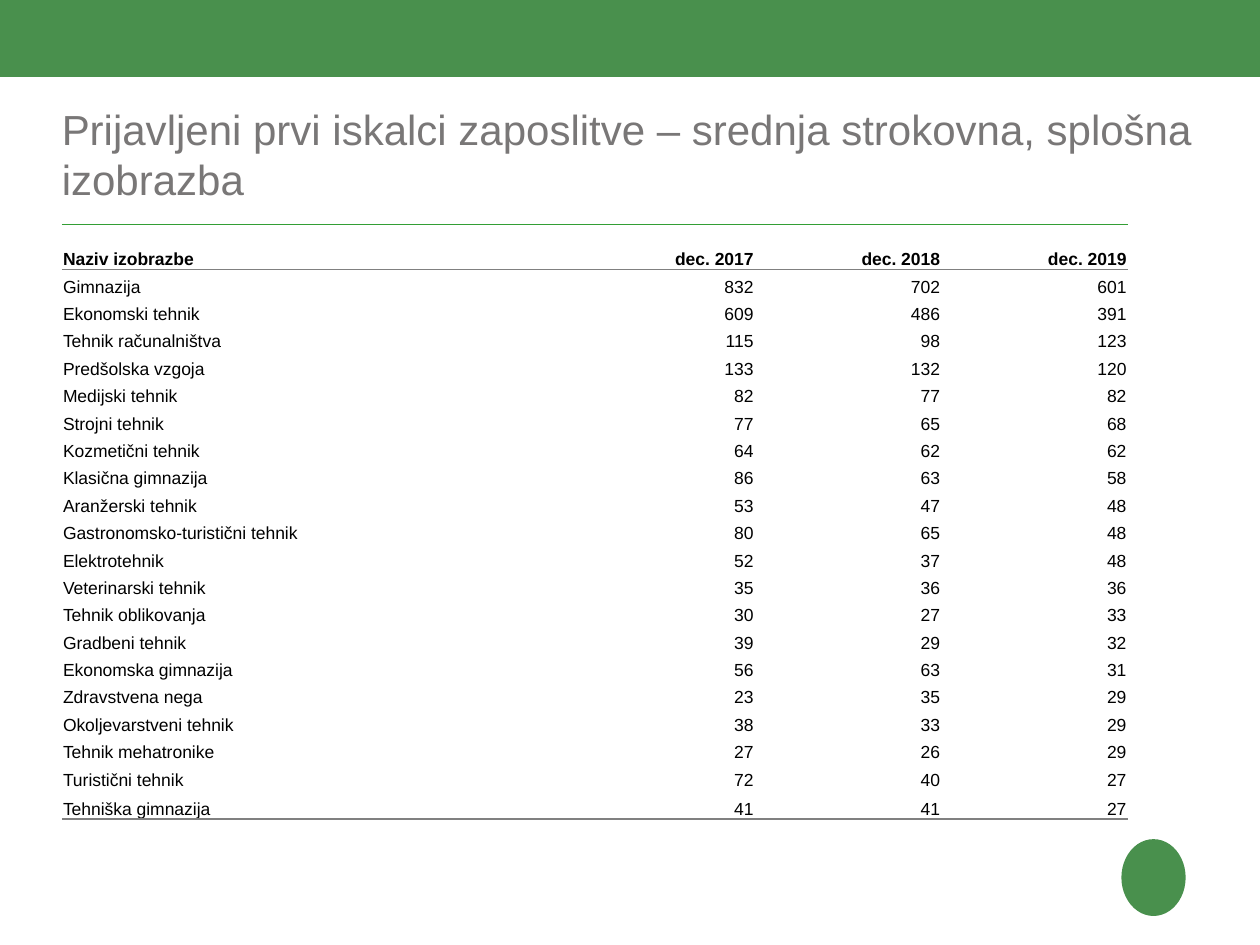
from lxml.etree import SubElement
from pptx import Presentation
from pptx.dml.color import RGBColor
from pptx.enum.shapes import MSO_SHAPE
from pptx.enum.text import MSO_ANCHOR, PP_ALIGN
from pptx.oxml.ns import qn
from pptx.util import Inches, Pt

COLOURS = {"band": "49904D", "title": "797777", "text": "000000", "green": "339E35", "grey": "808080"}
TITLE = "Prijavljeni prvi iskalci zaposlitve – srednja strokovna, splošna izobrazba"
ROWS = [
    ("Naziv izobrazbe", "dec. 2017", "dec. 2018", "dec. 2019"),
    ("Gimnazija", 832, 702, 601),
    ("Ekonomski tehnik", 609, 486, 391),
    ("Tehnik računalništva", 115, 98, 123),
    ("Predšolska vzgoja", 133, 132, 120),
    ("Medijski tehnik", 82, 77, 82),
    ("Strojni tehnik", 77, 65, 68),
    ("Kozmetični tehnik", 64, 62, 62),
    ("Klasična gimnazija", 86, 63, 58),
    ("Aranžerski tehnik", 53, 47, 48),
    ("Gastronomsko-turistični tehnik", 80, 65, 48),
    ("Elektrotehnik", 52, 37, 48),
    ("Veterinarski tehnik", 35, 36, 36),
    ("Tehnik oblikovanja", 30, 27, 33),
    ("Gradbeni tehnik", 39, 29, 32),
    ("Ekonomska gimnazija", 56, 63, 31),
    ("Zdravstvena nega", 23, 35, 29),
    ("Okoljevarstveni tehnik", 38, 33, 29),
    ("Tehnik mehatronike", 27, 26, 29),
    ("Turistični tehnik", 72, 40, 27),
    ("Tehniška gimnazija", 41, 41, 27),
]
COLUMN_WIDTHS = [4.02, 1.48, 1.48, 1.48]
TABLE_HEIGHT, HEADER_HEIGHT, LAST_HEIGHT = 4.72, 0.36, 0.23
BODY_HEIGHT = (TABLE_HEIGHT - HEADER_HEIGHT - LAST_HEIGHT) / (len(ROWS) - 2)
ROW_HEIGHTS = [HEADER_HEIGHT] + [BODY_HEIGHT] * (len(ROWS) - 2) + [LAST_HEIGHT]
LAST = len(ROWS) - 1
BORDERS = {
    0: {"a:lnT": "green", "a:lnB": "grey"},
    1: {"a:lnT": "grey"},
    LAST: {"a:lnB": "grey"},
}


def write(frame, text, size, colour, bold=False, align=PP_ALIGN.LEFT, spacing=None):
    para = frame.paragraphs[0]
    para.alignment = align
    para.line_spacing = spacing
    span = para.add_run()
    span.text = text
    span.font.name = "Arial"
    span.font.size = Pt(size)
    span.font.bold = bold
    span.font.color.rgb = RGBColor.from_string(COLOURS[colour])


def add_block(page, kind, left, top, width, height):
    block = page.shapes.add_shape(kind, Inches(left), Inches(top), Inches(width), Inches(height))
    block.shadow.inherit = False
    block.fill.solid()
    block.fill.fore_color.rgb = RGBColor.from_string(COLOURS["band"])
    block.line.fill.background()


def set_borders(cell, borders):
    properties = cell._tc.get_or_add_tcPr()
    for position, side in enumerate(("a:lnL", "a:lnR", "a:lnT", "a:lnB")):
        line = properties.makeelement(qn(side), {"w": str(Pt(1))})
        properties.insert(position, line)
        if side in borders:
            fill = SubElement(line, qn("a:solidFill"))
            SubElement(fill, qn("a:srgbClr"), val=COLOURS[borders[side]])
        else:
            SubElement(line, qn("a:noFill"))


def add_title(page):
    title = page.shapes.title
    title.left, title.top, title.width, title.height = map(Inches, (0.49, 0.82, 9.26, 0.71))
    frame = title.text_frame
    frame.margin_left = frame.margin_right = frame.margin_top = frame.margin_bottom = 0
    frame.vertical_anchor = MSO_ANCHOR.TOP
    frame.word_wrap = True
    write(frame, TITLE, 24, "title", spacing=Pt(28.8))


def add_education_table(page):
    table = page.shapes.add_table(
        len(ROWS), len(COLUMN_WIDTHS), Inches(0.49), Inches(1.78),
        Inches(sum(COLUMN_WIDTHS)), Inches(TABLE_HEIGHT),
    ).table
    table.first_row = table.horz_banding = False
    for column, width in zip(table.columns, COLUMN_WIDTHS):
        column.width = Inches(width)
    for index, values in enumerate(ROWS):
        table.rows[index].height = Inches(ROW_HEIGHTS[index])
        for position, value in enumerate(values):
            cell = table.cell(index, position)
            cell.margin_left = cell.margin_right = cell.margin_top = Inches(0.01)
            cell.margin_bottom = 0
            cell.vertical_anchor = MSO_ANCHOR.BOTTOM
            cell.fill.background()
            set_borders(cell, BORDERS.get(index, {}))
            align = PP_ALIGN.RIGHT if position else PP_ALIGN.LEFT
            write(cell.text_frame, str(value), 10, "text", bold=index == 0, align=align)


def main():
    deck = Presentation()
    deck.slide_width, deck.slide_height = Inches(10), Inches(7.5)
    page = deck.slides.add_slide(deck.slide_layouts[5])
    add_block(page, MSO_SHAPE.RECTANGLE, 0, -0.01, 10, 0.62)
    add_block(page, MSO_SHAPE.OVAL, 8.9, 6.66, 0.51, 0.61)
    add_title(page)
    add_education_table(page)
    deck.save("out.pptx")


if __name__ == "__main__":
    main()
